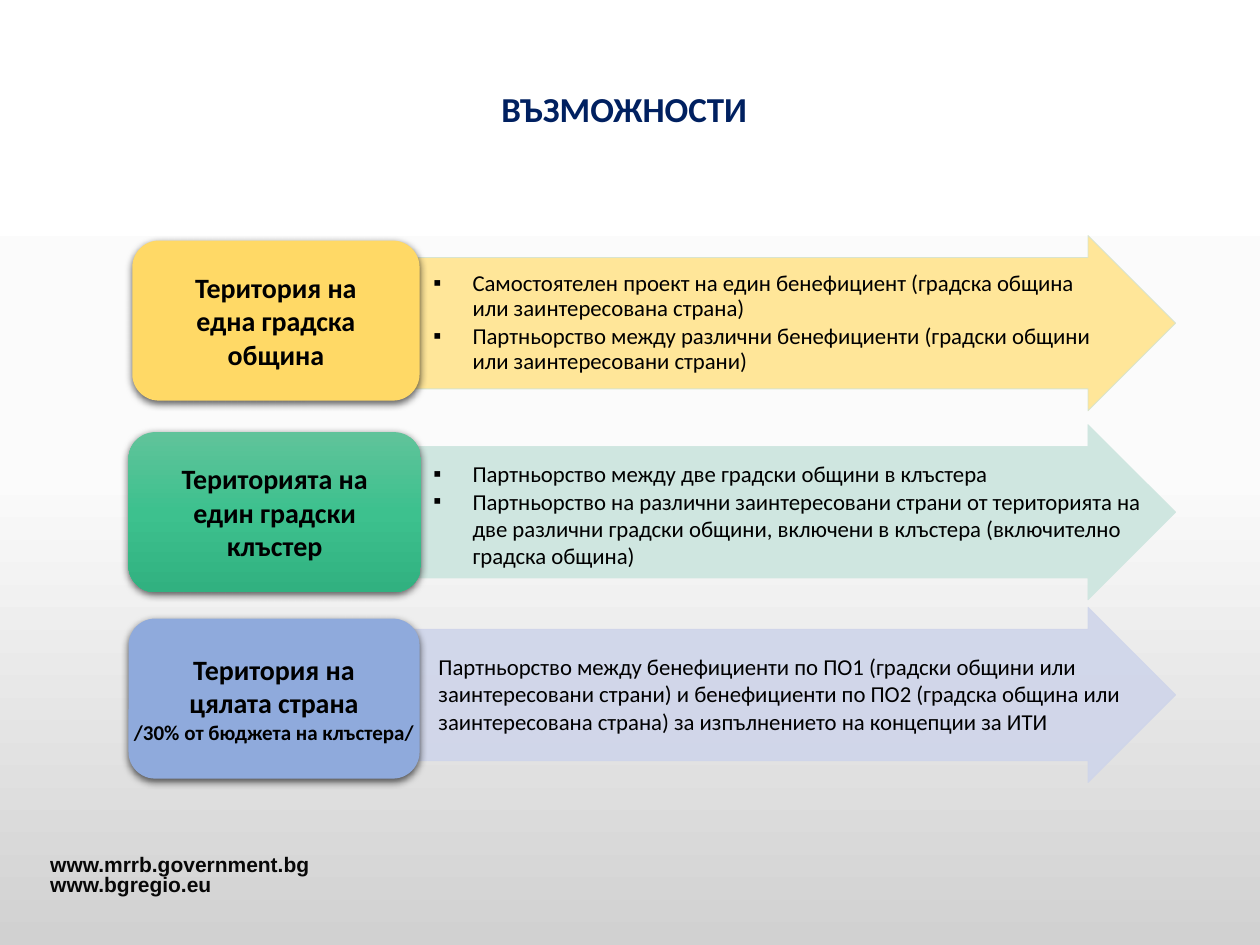
from dataclasses import dataclass

from lxml.etree import SubElement
from pptx import Presentation
from pptx.dml.color import RGBColor
from pptx.enum.shapes import MSO_SHAPE
from pptx.enum.text import MSO_ANCHOR, MSO_AUTO_SIZE, PP_ALIGN
from pptx.oxml.ns import qn
from pptx.util import Inches, Pt


@dataclass(frozen=True)
class Theme:
    face: str = "Calibri"
    web: str = "Arial"
    ink: str = "000000"
    navy: str = "002060"
    foot: str = "080808"
    head: int = 20
    label: int = 16
    text: int = 13
    small: int = 12
    page: tuple = ((0, "FFFFFF"), (50, "FBFBFB"), (100, "D1D1D1"))
    green: tuple = ((0, "60C39A"), (50, "3DC18E"), (100, "31B180"))
    gold: str = "FFD966"
    blue: str = "8FAADC"
    sand: str = "FFE699"
    edge: str = "D5E3CF"
    mint: str = "CFE6E0"
    pale: str = "CFD5EA"


T = Theme()

# One row per territory: label box, then arrow; places are left, top, width, height
ROWS = [
    dict(box=(1.05, 1.91, 2.28, 1.27), paint=T.gold,
         label=["Територия на", "една градска", "община"],
         arrow=(3.14, 1.87, 6.19, 1.39), fill=T.sand, line=T.edge),
    dict(box=(1.02, 3.43, 2.32, 1.27), paint=T.green, inset=0.32,
         label=["Територията на един градски клъстер"],
         arrow=(3.32, 3.37, 6.01, 1.39), fill=T.mint, line=T.mint),
    dict(box=(1.02, 4.91, 2.31, 1.27), paint=T.blue,
         label=["Територия на", "цялата страна"],
         note="/30% от бюджета на клъстера/",
         arrow=(3.14, 4.82, 6.19, 1.39), fill=T.pale, line=T.pale, alpha=90),
]

LISTS = [
    ((3.42, 2.14, 5.43, 0.94), dict(line_spacing=0.9, space_after=Pt(2)), [
        "Самостоятелен проект на един бенефициент (градска община "
        "или заинтересована страна)",
        "Партньорство между различни бенефициенти (градски общини "
        "или заинтересовани страни)"]),
    ((3.42, 3.63, 5.66, 0.94), dict(line_spacing=1.0), [
        "Партньорство между две градски общини в клъстера",
        "Партньорство на различни заинтересовани страни от територията на "
        "две различни градски общини, включени в клъстера (включително "
        "градска община)"]),
]

PLAIN = ("Партньорство между бенефициенти по ПО1 (градски общини или "
         "заинтересовани страни) и бенефициенти по ПО2 (градска община или "
         "заинтересована страна) за изпълнението на концепции за ИТИ")


# Formatting helpers
def apply(item, values):
    for name, value in values.items():
        setattr(item, name, value)


def place(shape, spot):
    names = ("left", "top", "width", "height")
    apply(shape, dict(zip(names, map(Inches, spot))))


def frame(shape, inset=None, wrap=True, anchor=MSO_ANCHOR.TOP):
    apply(shape.text_frame, dict(auto_size=MSO_AUTO_SIZE.NONE,
                                 word_wrap=wrap, vertical_anchor=anchor))
    if inset is not None:
        sides = ("left", "top", "right", "bottom")
        apply(shape.text_frame,
              {f"margin_{side}": Inches(inset) for side in sides})


def write(shape, lines, size, color=T.ink, face=T.face, bold=False, **form):
    shape.text_frame.text = "\n".join(lines)
    for para in shape.text_frame.paragraphs:
        apply(para, form)
        for run in para.runs:
            apply(run.font, dict(name=face, size=Pt(size), bold=bold))
            run.font.color.rgb = RGBColor.from_string(color)


def blend(fill, root, stops):
    """Set a top-down gradient on the first gradient found under root."""
    fill.gradient()
    fill.gradient_angle = 270
    marks = root.find(".//" + qn("a:gsLst"))
    marks.clear()
    for pos, color in stops:
        stop = SubElement(marks, qn("a:gs"), pos=str(pos * 1000))
        SubElement(stop, qn("a:srgbClr"), val=color)


def fade(root, alpha):
    for color in root.iter(qn("a:srgbClr")):
        SubElement(color, qn("a:alpha"), val=str(alpha * 1000))


def shade(shape):
    shape.shadow.inherit = False
    glow = SubElement(shape.element.spPr.find(qn("a:effectLst")),
                      qn("a:outerShdw"), blurRad=str(Pt(4.5)),
                      dist=str(Pt(1.5)), dir="5400000", rotWithShape="0")
    color = SubElement(glow, qn("a:srgbClr"), val="000000")
    SubElement(color, qn("a:alpha"), val="63000")


def mark(para):
    """Give a paragraph a square bullet with a hanging indent."""
    props = para._p.get_or_add_pPr()
    props.set("marL", str(Inches(0.31)))
    props.set("indent", str(-Inches(0.31)))
    SubElement(props, qn("a:buFont"), typeface=T.web)
    SubElement(props, qn("a:buChar"), char="▪")


# Kinds of element
def add_arrow(slide, row):
    arrow = slide.shapes.add_shape(MSO_SHAPE.RIGHT_ARROW,
                                   *map(Inches, row["arrow"]))
    arrow.adjustments[0] = 0.75
    arrow.shadow.inherit = False
    arrow.fill.solid()
    arrow.fill.fore_color.rgb = RGBColor.from_string(row["fill"])
    arrow.line.width = Pt(0.5)
    arrow.line.color.rgb = RGBColor.from_string(row["line"])
    ln = arrow.element.spPr.find(qn("a:ln"))
    fade(arrow.element.spPr if "alpha" in row else ln, 90)


def add_box(slide, row):
    box = slide.shapes.add_shape(MSO_SHAPE.ROUNDED_RECTANGLE,
                                 *map(Inches, row["box"]))
    box.line.fill.background()
    if isinstance(row["paint"], str):
        box.fill.solid()
        box.fill.fore_color.rgb = RGBColor.from_string(row["paint"])
    else:
        blend(box.fill, box.element, row["paint"])
    shade(box)
    frame(box, row.get("inset", 0), "inset" in row, MSO_ANCHOR.MIDDLE)
    note = [row["note"]] if "note" in row else []
    write(box, row["label"] + note, T.label, bold=True,
          alignment=PP_ALIGN.CENTER)
    if note:
        box.text_frame.paragraphs[-1].runs[0].font.size = Pt(T.small)


def add_list(holder, spot, form, lines):
    place(holder, spot)
    frame(holder, 0.02)
    write(holder, lines, T.text, space_before=Pt(0), **form)
    for para in holder.text_frame.paragraphs:
        mark(para)
    # Bring the list in front of the arrows
    holder.element.getparent().append(holder.element)


def add_text(slide, spot, lines, size, inset=None, **form):
    box = slide.shapes.add_textbox(*map(Inches, spot))
    frame(box, inset)
    write(box, lines, size, **form)


def main():
    deck = Presentation()
    apply(deck, dict(slide_width=Inches(10), slide_height=Inches(7.5)))
    slide = deck.slides.add_slide(deck.slide_layouts[3])
    blend(slide.background.fill, slide.element, T.page)

    # Title
    title, *bodies = slide.placeholders
    place(title, (3.87, 0.48, 2.17, 0.55))
    frame(title, wrap=False)
    write(title, ["ВЪЗМОЖНОСТИ"], T.head, T.navy, bold=True,
          line_spacing=1.5, alignment=PP_ALIGN.CENTER)

    # Arrows with their territory boxes
    for row in ROWS:
        add_arrow(slide, row)
        add_box(slide, row)

    # Options on the arrows
    for body, item in zip(bodies, LISTS):
        add_list(body, *item)
    add_text(slide, (3.46, 5.16, 5.66, 0.94), [PLAIN], T.text, 0.02)

    # Web addresses
    add_text(slide, (0.3, 6.75, 9.31, 0.27),
             ["www.mrrb.government.bg", "www.bgregio.eu"], T.small,
             color=T.foot, face=T.web, bold=True, line_spacing=0.8)
    deck.save("out.pptx")


if __name__ == "__main__":
    main()
